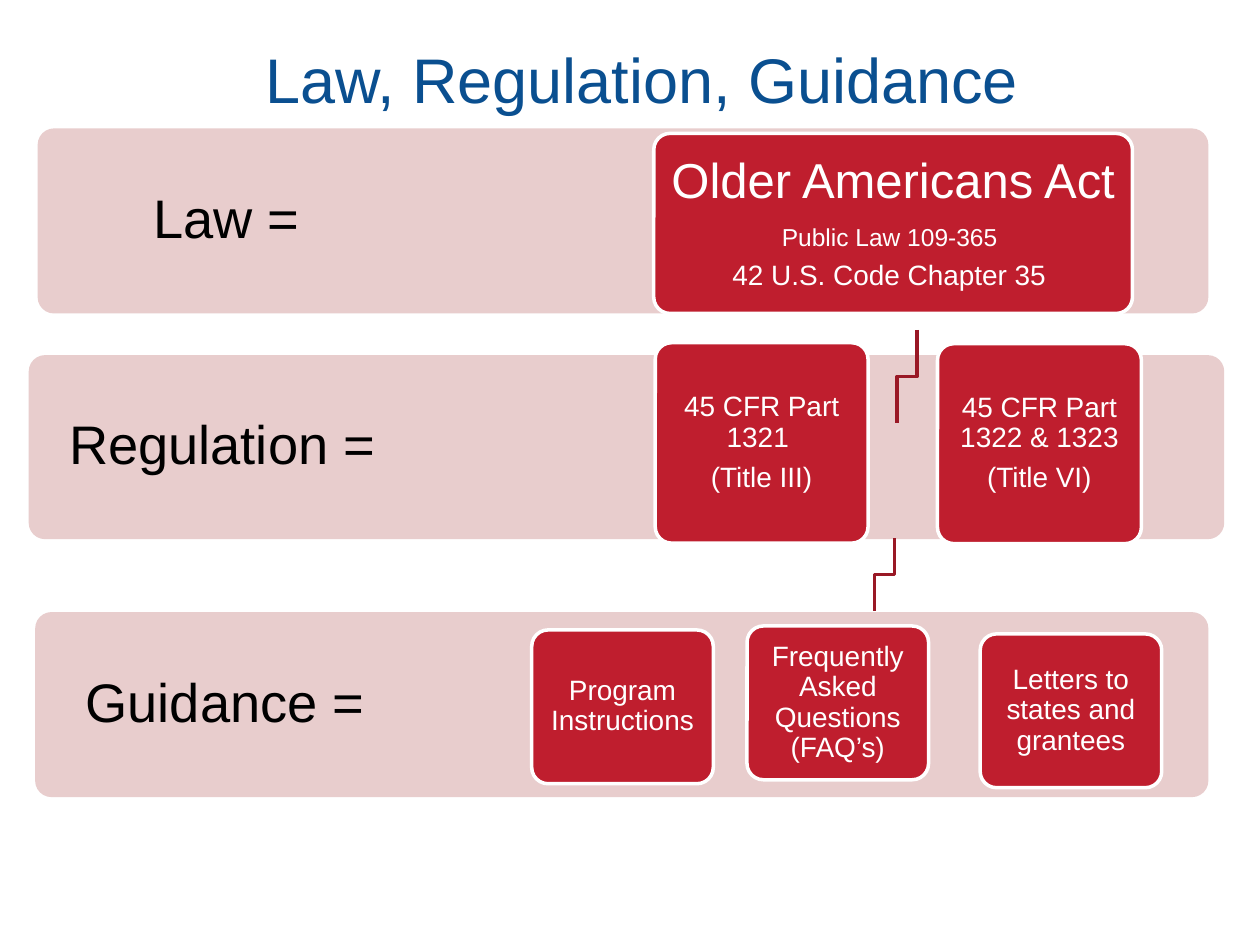
from dataclasses import dataclass

from pptx import Presentation
from pptx.dml.color import RGBColor
from pptx.enum.shapes import MSO_SHAPE
from pptx.enum.text import MSO_ANCHOR, PP_ALIGN
from pptx.util import Cm, Pt

ROUNDED = MSO_SHAPE.ROUNDED_RECTANGLE
MIDDLE = MSO_ANCHOR.MIDDLE
CENTER = PP_ALIGN.CENTER

FONT = "Arial"
BLUE, PINK, RED, DARK_RED = "0A4F90", "E8CDCD", "BF1E2E", "991825"
WHITE, BLACK = "FFFFFF", "000000"
CORNER = 0.33  # corner radius in cm
CORNER_INSET = 0.29 * CORNER  # text inset a rounded corner adds


@dataclass
class Line:
    text: str
    size: int = 16


@dataclass
class Panel:
    left: float
    top: float
    width: float
    height: float
    lines: list[Line]
    inset: float = 0.23


@dataclass
class Link:
    """A stepped line from its upper end to its lower end."""
    x1: float
    y1: float
    x2: float
    y2: float


BANDS = [
    Panel(0.71, 12.34, 23.65, 3.73, [Line("Guidance =", 31)], 0.61),
    Panel(0.58, 7.16, 24.1, 3.71, [Line("Regulation = ", 31)], 0.61),
    Panel(0.76, 2.59, 23.6, 3.73, [Line("Law =", 31)], 0.61),
]
BAND_RIGHT_INSET = 16.61  # keeps the labels in the left part of the band

GUIDANCE_SIZE = (3.66, 3.1)
CARDS = [
    Panel(13.18, 2.69, 9.65, 3.63, [
        Line("Older Americans Act", 28),
        Line("Public Law 109-365 ", 14),
        Line("42 U.S. Code Chapter 35 "),
    ], 0.28),
    Panel(13.21, 6.91, 4.29, 4.04, [Line("45 CFR Part 1321 "), Line("(Title III)")]),
    Panel(18.9, 6.93, 4.11, 4.03, [Line("45 CFR Part 1322 & 1323"), Line("(Title VI)")]),
    Panel(10.72, 12.7, *GUIDANCE_SIZE, [Line("Program Instructions")]),
    Panel(19.76, 12.78, *GUIDANCE_SIZE, [Line("Letters to states and grantees")]),
    Panel(15.06, 12.62, *GUIDANCE_SIZE, [Line("Frequently Asked Questions (FAQ’s)")]),
]
LINKS = [Link(18.49, 6.65, 18.08, 8.53), Link(18.03, 10.85, 17.63, 12.32)]


def color(value: str) -> RGBColor:
    return RGBColor.from_string(value)


def add_span(para, text: str, size: int, ink: str) -> None:
    span = para.add_run()
    span.text = text
    span.font.name = FONT
    span.font.size = Pt(size)
    span.font.color.rgb = color(ink)


def draw_panel(page, panel: Panel, fill: str, ink: str):
    box = page.shapes.add_shape(ROUNDED, Cm(panel.left), Cm(panel.top),
                                Cm(panel.width), Cm(panel.height))
    box.adjustments[0] = CORNER / min(panel.width, panel.height)
    box.shadow.inherit = False
    box.fill.solid()
    box.fill.fore_color.rgb = color(fill)
    box.line.fill.background()

    frame = box.text_frame
    frame.word_wrap = True
    frame.vertical_anchor = MIDDLE
    inset = Cm(panel.inset - CORNER_INSET)
    frame.margin_left = frame.margin_right = inset
    frame.margin_top = frame.margin_bottom = inset
    for index, line in enumerate(panel.lines):
        para = frame.add_paragraph() if index else frame.paragraphs[0]
        para.alignment = CENTER
        para.line_spacing = 0.9
        para.space_after = Pt(0.35 * line.size)
        add_span(para, line.text, line.size, ink)
    return box


def draw_band(page, panel: Panel) -> None:
    box = draw_panel(page, panel, PINK, BLACK)
    box.text_frame.margin_right = Cm(BAND_RIGHT_INSET - CORNER_INSET)


def draw_card(page, panel: Panel) -> None:
    box = draw_panel(page, panel, RED, WHITE)
    box.line.color.rgb = color(WHITE)
    box.line.width = Pt(2)


def draw_link(page, link: Link) -> None:
    middle = (link.y1 + link.y2) / 2
    points = [(link.x1, middle), (link.x2, middle), (link.x2, link.y2)]
    builder = page.shapes.build_freeform(Cm(link.x1), Cm(link.y1))
    builder.add_line_segments([(Cm(x), Cm(y)) for x, y in points], close=False)
    step = builder.convert_to_shape()
    step.shadow.inherit = False
    step.fill.background()
    step.line.color.rgb = color(DARK_RED)
    step.line.width = Pt(2)


def draw_title(page, text: str) -> None:
    title = page.shapes.title
    title.left, title.top, title.width, title.height = Cm(1.3), Cm(0.43), Cm(23.27), Cm(2.29)
    title.text_frame.vertical_anchor = MIDDLE
    para = title.text_frame.paragraphs[0]
    para.alignment = CENTER
    add_span(para, text, 36, BLUE)


def main() -> None:
    deck = Presentation()
    deck.slide_width, deck.slide_height = Cm(25.4), Cm(19.05)
    page = deck.slides.add_slide(deck.slide_layouts[5])  # title only

    draw_title(page, "Law, Regulation, Guidance")
    # Bands lie behind the cards
    for band in BANDS:
        draw_band(page, band)
    for card in CARDS:
        draw_card(page, card)
    # Stepped lines between the levels
    for link in LINKS:
        draw_link(page, link)

    deck.save("out.pptx")


if __name__ == "__main__":
    main()
